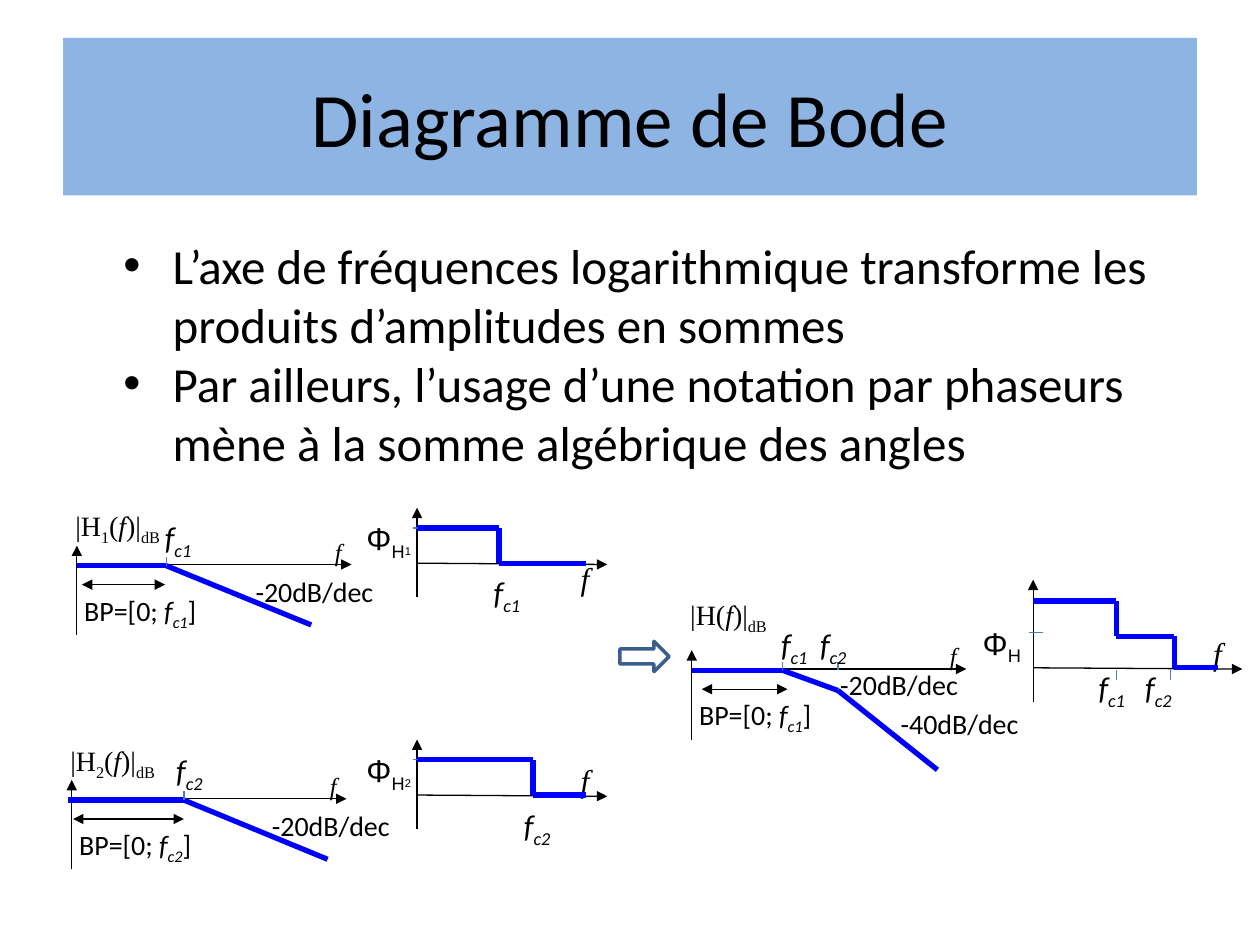
from itertools import pairwise

from lxml.etree import SubElement
from pptx import Presentation
from pptx.dml.color import RGBColor
from pptx.enum.shapes import MSO_CONNECTOR, MSO_SHAPE
from pptx.enum.text import MSO_ANCHOR, MSO_AUTO_SIZE, PP_ALIGN
from pptx.oxml.ns import qn
from pptx.util import Inches, Pt

BLACK, CURVE, TICK = "000000", "0000FF", "4B7EBC"
ITALIC = {"italic": True}
SUB = {"baseline": "-25000"}
ITALIC_SUB = ITALIC | SUB


def color(hex_value):
    return RGBColor.from_string(hex_value)


def place(shape, left, top, width, height):
    box = {"left": left, "top": top, "width": width, "height": height}
    for name, value in box.items():
        setattr(shape, name, Inches(value))


def add_run(paragraph, text, size, font="Calibri", baseline=None, **formats):
    run = paragraph.add_run()
    run.text = text
    for name, value in ({"name": font, "size": Pt(size)} | formats).items():
        setattr(run.font, name, value)
    run.font.color.rgb = color(BLACK)
    if baseline:
        run.font._element.set("baseline", baseline)


def add_label(slide, left, top, width, runs, size=16, font="Calibri"):
    """One-line label; each run is (text, formats)."""
    shape = slide.shapes.add_textbox(
        Inches(left), Inches(top), Inches(width), Inches(0.37))
    shape.text_frame.word_wrap = True
    for text, formats in runs:
        add_run(shape.text_frame.paragraphs[0], text,
                **({"size": size, "font": font} | formats))


def add_line(slide, start, end, line_color=BLACK, weight=0.75, arrows=()):
    line = slide.shapes.add_connector(
        MSO_CONNECTOR.STRAIGHT, *(Inches(value) for value in (*start, *end)))
    line.line.color.rgb = color(line_color)
    line.line.width = Pt(weight)
    outline = line.line._get_or_add_ln()
    for arrow in arrows:
        SubElement(outline, qn(f"a:{arrow}")).set("type", "triangle")
    SubElement(line._element.spPr, qn("a:effectLst"))


def add_curve(slide, points):
    for start, end in pairwise(points):
        add_line(slide, start, end, CURVE, 3)


def add_cutoff(slide, left, top, name):
    add_label(slide, left, top, 0.72,
              [("f", ITALIC), (name, ITALIC_SUB)], size=18)


def add_gain_plot(slide, x, y, index, bend_points, band, cutoff, label_top):
    """Gain diagram with its origin at (x, y); points are offsets from it."""
    # Axes
    add_line(slide, (x, y + 0.55), (x, y - 0.16), arrows=["tailEnd"])
    add_line(slide, (x + 0.03, y - 0.01), (x + 2.18, y - 0.01),
             arrows=["tailEnd"])
    add_label(slide, x + 1.95, y - 0.28, 0.32, [("f", ITALIC)],
              14, "Times New Roman")
    # Magnitude name
    name = [("|H", {}), (index, SUB), ("(", {})] if index else [("|H(", {})]
    add_label(slide, x - 0.11, label_top, 1.06,
              [*name, ("f", ITALIC), (")|", {}), ("dB", SUB)],
              16, "Times New Roman")
    # Asymptotes and cutoff ticks
    points = [(x + dx, y + dy) for dx, dy in bend_points]
    add_curve(slide, points)
    for tick_x, _ in points[1:-1]:
        add_line(slide, (tick_x, y), (tick_x, y - 0.07), TICK)
    # Pass band
    add_line(slide, (x + band[0], y + 0.15), (x + band[1], y + 0.15),
             arrows=["headEnd", "tailEnd"])
    add_label(slide, x - 0.04, y + 0.17, 1.29,
              [("BP=[0; ", {}), ("f", ITALIC), (cutoff, ITALIC_SUB),
               ("]", {})])


def add_phase_plot(slide, x, y, index, steps, height, length, end, f_offset):
    """Phase diagram; steps lists (offset where a level ends, its height)."""
    # Axes
    add_line(slide, (x, y + 0.27), (x, y - height), arrows=["tailEnd"])
    add_line(slide, (x, y), (x + length, y + 0.01), arrows=["tailEnd"])
    add_label(slide, x + end - 0.14, y + f_offset, 0.32,
              [("f", ITALIC)], 18, "Times New Roman")
    # Phase name and tick
    runs = [("Φ", {}), ("Η", SUB)]
    if index:
        runs.append((index, SUB | {"size": 11}))
    add_label(slide, x - 0.5, y - 0.4, 0.72, runs, 18, "Arial")
    add_line(slide, (x - 0.03, y - 0.28), (x + 0.08, y - 0.28), TICK)
    # Staircase
    points, left = [], x
    for step_end, level in [*steps, (end, 0)]:
        points += [(left, y - level), (x + step_end, y - level)]
        left = x + step_end
    add_curve(slide, points)


def add_title_and_body(slide):
    title, body = slide.placeholders
    place(title, 0.5, 0.3, 9, 1.25)
    title.fill.solid()
    title.fill.fore_color.rgb = color("8EB4E3")
    title.text_frame.vertical_anchor = MSO_ANCHOR.MIDDLE
    heading = title.text_frame.paragraphs[0]
    heading.alignment = PP_ALIGN.CENTER
    add_run(heading, "Diagramme de Bode", 44)

    place(body, 0.88, 1.82, 8.58, 1.99)
    frame = body.text_frame
    frame.auto_size = MSO_AUTO_SIZE.NONE
    frame.add_paragraph()
    items = [
        "L’axe de fréquences logarithmique transforme les produits "
        "d’amplitudes en sommes",
        "Par ailleurs, l’usage d’une notation par phaseurs mène à la somme "
        "algébrique des angles",
    ]
    for paragraph, item in zip(frame.paragraphs, items):
        paragraph.space_before = Pt(0)
        properties = paragraph._p.get_or_add_pPr()
        properties.set("marL", str(Inches(0.39)))
        properties.set("indent", str(Inches(-0.39)))
        SubElement(properties, qn("a:buFont")).set("typeface", "Arial")
        SubElement(properties, qn("a:buChar")).set("char", "•")
        add_run(paragraph, item, 28)


def add_result_arrow(slide):
    arrow = slide.shapes.add_shape(
        MSO_SHAPE.RIGHT_ARROW, Inches(4.92), Inches(5.09),
        Inches(0.39), Inches(0.24))
    arrow.shadow.inherit = False
    arrow.fill.background()
    arrow.line.color.rgb = color("3A5F8C")
    arrow.line.width = Pt(2)


def main():
    presentation = Presentation()
    presentation.slide_width, presentation.slide_height = Inches(10), Inches(7.5)
    slide = presentation.slides.add_slide(presentation.slide_layouts[1])
    add_title_and_body(slide)

    # First and second filters, then their product
    add_gain_plot(slide, 0.61, 4.49, "1", [(0, 0), (0.71, 0), (1.86, 0.47)],
                  (0.04, 0.7), "c1", 3.99)
    add_gain_plot(slide, 0.57, 6.35, "2", [(-0.03, 0), (0.89, 0), (2.03, 0.47)],
                  (0.01, 0.89), "c2", 5.85)
    add_gain_plot(slide, 5.49, 5.32, None,
                  [(0, 0), (0.72, 0), (1.16, 0.16), (1.95, 0.79)],
                  (0.08, 0.76), "c1", 4.69)
    add_phase_plot(slide, 3.31, 4.47, "1", [(0.65, 0.28)],
                   0.44, 1.51, 1.34, -0.08)
    add_phase_plot(slide, 3.31, 6.31, "2", [(0.92, 0.28)],
                   0.44, 1.51, 1.34, -0.32)
    add_phase_plot(slide, 8.2, 5.3, None, [(0.66, 0.53), (1.12, 0.25)],
                   0.7, 1.66, 1.47, -0.32)
    for tick_x in (8.86, 9.29):
        add_line(slide, (tick_x, 5.4), (tick_x, 5.32), TICK)

    # Slopes
    for left, top, slope in [(1.93, 4.51, 20), (2.06, 6.37, 20),
                             (6.57, 5.25, 20), (7.05, 5.56, 40)]:
        add_label(slide, left, top, 1.3, [(f"-{slope}dB/dec", {})])

    # Cutoff frequencies
    for left, top, name in [
            (1.21, 4.06, "c1"), (3.82, 4.5, "c1"),
            (1.3, 5.91, "c2"), (4.06, 6.35, "c2"),
            (6.1, 4.91, "c1"), (6.41, 4.91, "c2"),
            (8.62, 5.25, "c1"), (8.99, 5.25, "c2")]:
        add_cutoff(slide, left, top, name)

    add_result_arrow(slide)
    presentation.save("out.pptx")


if __name__ == "__main__":
    main()
